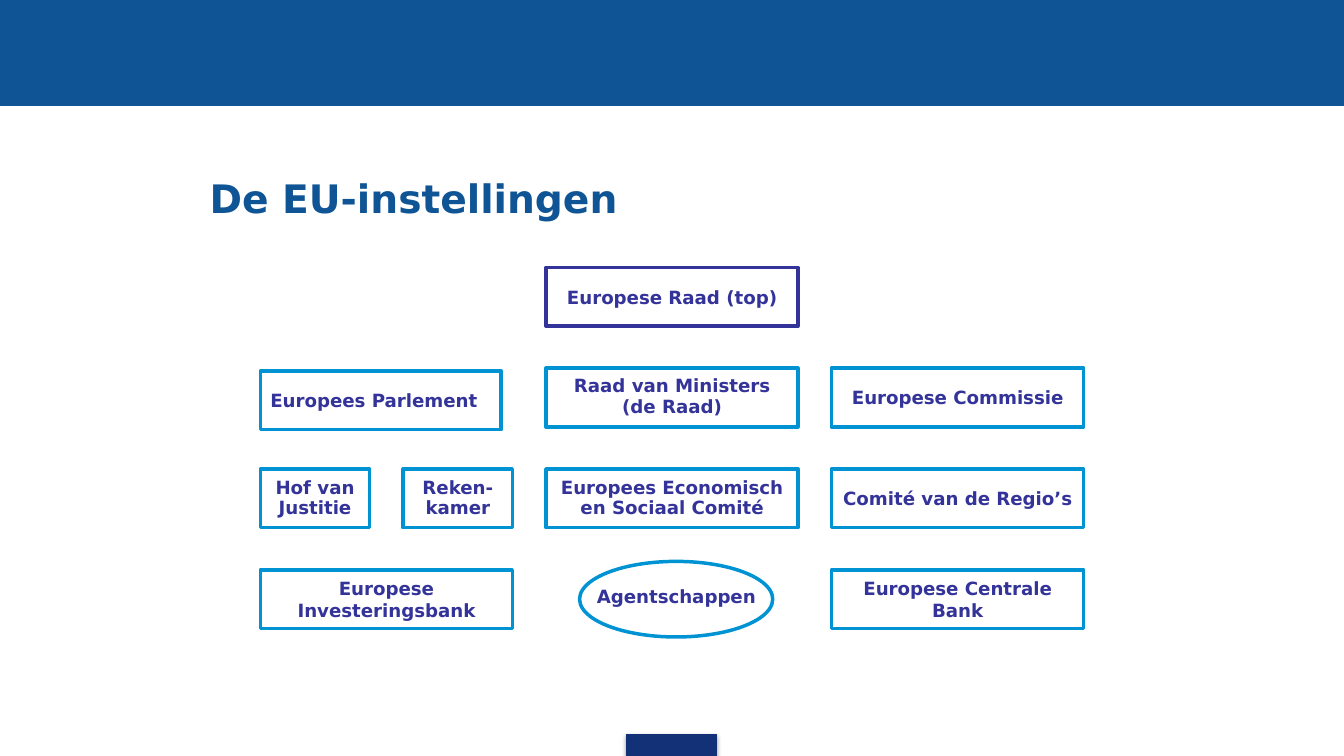
import pptx
import pptx.util
import pptx.oxml
import pptx.dml.color
import pptx.enum.shapes
import pptx.enum.text
from dataclasses import dataclass

Pt = pptx.util.Pt
Shape = pptx.enum.shapes.MSO_SHAPE
Align = pptx.enum.text.PP_ALIGN
Anchor = pptx.enum.text.MSO_ANCHOR


@dataclass(frozen=True)
class Theme:
    font: str = "DejaVu Sans"
    band: str = "0F5494"
    foot: str = "133176"
    ink: str = "333399"
    edge: str = "0093D3"
    head: int = 28
    body: int = 13
    thick: float = 2.5
    thin: float = 0.75


SHADE = """<a:effectLst
 xmlns:a="http://schemas.openxmlformats.org/drawingml/2006/main">
 <a:outerShdw blurRad="39370" dist="22860" dir="5400000" rotWithShape="0">
 <a:srgbClr val="000000"><a:alpha val="35000"/></a:srgbClr>
 </a:outerShdw></a:effectLst>"""


def rgb(code):
    return pptx.dml.color.RGBColor.from_string(code)


def write(frame, text, font, size, color, align=Align.CENTER,
          anchor=Anchor.MIDDLE, lead=1.0, gap=0):
    """Fill a text frame, one paragraph per line of text."""
    frame.word_wrap = True
    frame.auto_size = pptx.enum.text.MSO_AUTO_SIZE.NONE
    frame.vertical_anchor = anchor
    for i, line in enumerate(text.split("\n")):
        para = frame.add_paragraph() if i else frame.paragraphs[0]
        para.alignment = align
        para.line_spacing = lead
        para.space_before = Pt(gap if i else 0)
        run = para.add_run()
        run.text = line
        run.font.name = font
        run.font.size = Pt(size)
        run.font.bold = True
        run.font.color.rgb = rgb(color)


class Deck:
    def __init__(self, theme):
        self.theme = theme
        self.prs = pptx.Presentation()
        self.prs.slide_width, self.prs.slide_height = Pt(960), Pt(540)
        self.slide = self.prs.slides.add_slide(self.prs.slide_layouts[5])

    def shape(self, kind, area, line, width, fill=None):
        item = self.slide.shapes.add_shape(kind, *map(Pt, area))
        item.shadow.inherit = False
        item.line.color.rgb = rgb(line)
        item.line.width = Pt(width)
        if fill:
            item.fill.solid()
            item.fill.fore_color.rgb = rgb(fill)
        else:
            item.fill.background()
        return item

    def bar(self, area, color, shade=False):
        item = self.shape(Shape.RECTANGLE, area, color, self.theme.thin, color)
        if shade:
            props = item.element.spPr
            props.remove(props.effectLst)
            props.append(pptx.oxml.parse_xml(SHADE))

    def title(self, text, area):
        item = self.slide.shapes.title
        item.left, item.top, item.width, item.height = map(Pt, area)
        write(item.text_frame, text, self.theme.font, self.theme.head,
              self.theme.band, align=Align.LEFT, anchor=Anchor.TOP)

    def box(self, text, area, line=None, **style):
        t = self.theme
        item = self.shape(Shape.RECTANGLE, area, line or t.edge, t.thick)
        write(item.text_frame, text, t.font, t.body, t.ink, **style)

    def oval(self, area):
        self.shape(Shape.OVAL, area, self.theme.edge, self.theme.thick)

    def label(self, text, area):
        item = self.slide.shapes.add_textbox(*map(Pt, area))
        write(item.text_frame, text, self.theme.font, self.theme.body,
              self.theme.ink)


def main():
    theme = Theme()
    deck = Deck(theme)
    deck.bar((0, 0, 960, 75.5), theme.band)
    deck.bar((447.5, 524.5, 64.5, 15.5), theme.foot, shade=True)
    deck.title("De EU-instellingen", (142.5, 121, 369, 41))

    wide, small, high = 180, 78, 42
    cols = [186 + 204 * i for i in range(3)]
    rows = [191 + 72 * i for i in range(4)]
    half = cols[0] + wide - small  # left edge of the second small box

    deck.box("Europees Parlement", (cols[0], rows[1] + 2, 172, high),
             align=Align.LEFT)
    boxes = [
        ("Hof van Justitie", cols[0], 2, small, 0.9),
        ("Reken-kamer", half, 2, small, 0.9),
        ("Europees Economisch en Sociaal Comité", cols[1], 2, wide, 0.9),
        ("Comité van de Regio’s", cols[2], 2, wide, 1.0),
        ("Raad van Ministers\n(de Raad)", cols[1], 1, wide, 0.8),
        ("Europese Commissie", cols[2], 1, wide, 1.0),
        ("Europese Investeringsbank", cols[0], 3, wide, 1.0),
        ("Europese Centrale Bank", cols[2], 3, wide, 1.0),
    ]
    for text, left, row, width, lead in boxes:
        deck.box(text, (left, rows[row], width, high), lead=lead, gap=2.6)
    deck.oval((414, 401, 138, 54))
    deck.label("Agentschappen", (402, 411, 162, 30))
    deck.box("Europese Raad (top)", (cols[1], rows[0], wide, high),
             line=theme.ink)
    deck.prs.save("out.pptx")


if __name__ == "__main__":
    main()
